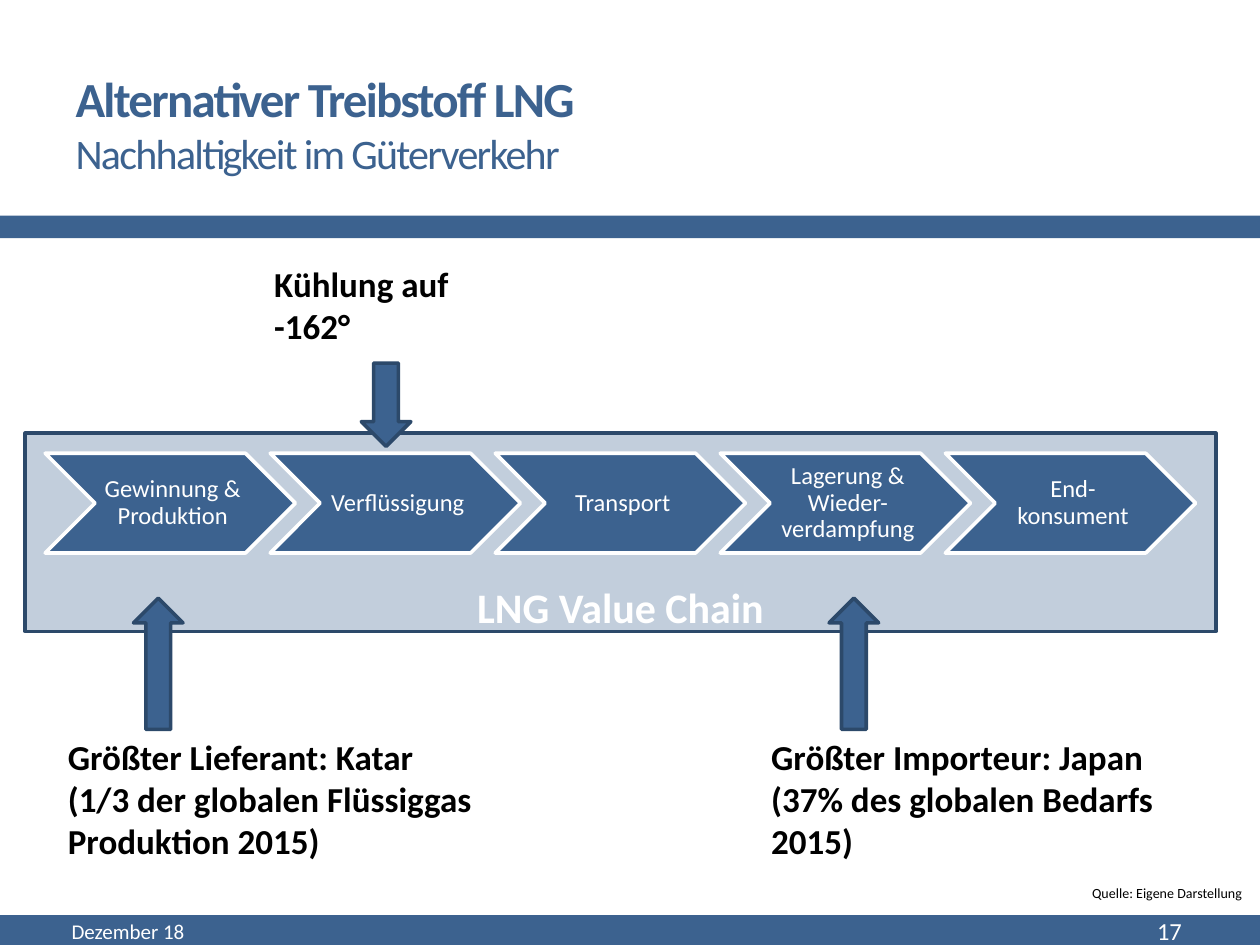
from dataclasses import dataclass

import pptx
import pptx.dml.color
import pptx.enum.shapes
import pptx.enum.text
import pptx.util

Pt = pptx.util.Pt
MSO = pptx.enum.shapes.MSO_SHAPE
ALIGN = pptx.enum.text.PP_ALIGN
ANCHOR = pptx.enum.text.MSO_ANCHOR

BLUE, DARK, WHITE, BLACK = "3C628F", "2C496A", "FFFFFF", "000000"
FONT = "Calibri"


@dataclass
class Box:
    x: float
    y: float
    w: float
    h: float

    def emu(self) -> list:
        return [Pt(v) for v in (self.x, self.y, self.w, self.h)]


@dataclass
class Label:
    box: Box
    lines: list[str]
    size: float
    color: str = BLACK
    bold: bool = False
    align: ALIGN = ALIGN.LEFT
    anchor: ANCHOR = ANCHOR.TOP


@dataclass
class Arrow:
    kind: MSO
    box: Box


def rgb(value: str) -> pptx.dml.color.RGBColor:
    return pptx.dml.color.RGBColor.from_string(value)


def add_run(p, text: str, size: float, color: str, bold: bool = False):
    r = p.add_run()
    r.text = text
    r.font.name = FONT
    r.font.size = Pt(size)
    r.font.bold = bold
    r.font.color.rgb = rgb(color)
    return r


def set_margins(tf, left: float, top: float, right: float, bottom: float) -> None:
    tf.margin_left, tf.margin_top = Pt(left), Pt(top)
    tf.margin_right, tf.margin_bottom = Pt(right), Pt(bottom)


def add_shape(s, kind: MSO, box: Box, fill: str = BLUE, line: str | None = None):
    sp = s.shapes.add_shape(kind, *box.emu())
    sp.shadow.inherit = False
    sp.fill.solid()
    sp.fill.fore_color.rgb = rgb(fill)
    if line:
        sp.line.color.rgb = rgb(line)
        sp.line.width = Pt(2.08)
    else:
        sp.line.fill.background()
    return sp


def set_alpha(sp, percent: int) -> None:
    color = sp.fill._xPr.find(".//" + pptx.oxml.ns.qn("a:srgbClr"))
    alpha = pptx.oxml.parse_xml(
        f'<a:alpha {pptx.oxml.ns.nsdecls("a")} val="{percent * 1000}"/>')
    color.append(alpha)


def add_label(s, label: Label) -> None:
    tf = s.shapes.add_textbox(*label.box.emu()).text_frame
    tf.word_wrap = True
    tf.vertical_anchor = label.anchor
    p = tf.paragraphs[0]
    p.alignment = label.align
    for i, line in enumerate(label.lines):
        if i:
            p.add_line_break()
        add_run(p, line, label.size, label.color, label.bold)


def add_title(s) -> None:
    sp = s.shapes.title
    sp.left, sp.top, sp.width, sp.height = Box(36, 31.7, 375, 77.8).emu()
    tf = sp.text_frame
    tf.word_wrap = True
    tf.vertical_anchor = ANCHOR.MIDDLE
    p = tf.paragraphs[0]
    p.alignment = ALIGN.LEFT
    heading = add_run(p, "Alternativer Treibstoff LNG", 28, BLUE, True)
    p.add_line_break()
    subtitle = add_run(p, "Nachhaltigkeit im Güterverkehr", 24, BLUE)
    for r in (heading, subtitle):
        r.font._element.set("spc", "-100")


def add_chain(s, steps: list[str]) -> None:
    band = add_shape(s, MSO.RECTANGLE, Box(14.4, 247.5, 680.4, 113.3), BLUE, DARK)
    set_alpha(band, 31)
    tf = band.text_frame
    set_margins(tf, 7.2, 0, 7.2, 0)
    tf.vertical_anchor = ANCHOR.BOTTOM
    p = tf.paragraphs[0]
    p.alignment = ALIGN.CENTER
    add_run(p, "LNG Value Chain", 24, WHITE, True)

    for i, step in enumerate(steps):
        box = Box(25.8 + i * 128.6, 259, 143, 57)
        tf = add_shape(s, MSO.CHEVRON, box, BLUE, WHITE).text_frame
        tf.word_wrap = True
        tf.vertical_anchor = ANCHOR.MIDDLE
        set_margins(tf, 4.4, 1.5, 1.5, 1.5)
        p = tf.paragraphs[0]
        p.alignment = ALIGN.CENTER
        p.line_spacing = 0.9
        add_run(p, step, 14, WHITE)


STEPS = ["Gewinnung & Produktion", "Verflüssigung", "Transport",
         "Lagerung & Wieder-verdampfung", "End-konsument"]
BARS = [Box(0, 522.9, 720, 17.1), Box(0, 123.3, 720, 12.8)]
ARROWS = [
    Arrow(MSO.UP_ARROW, Box(76.3, 341.8, 28.3, 75)),
    Arrow(MSO.UP_ARROW, Box(473.8, 341.8, 28.3, 75)),
    Arrow(MSO.DOWN_ARROW, Box(206.5, 207.5, 28.3, 47.6)),
]
LABELS = [
    Label(Box(149.6, 146.2, 142.6, 55.4), ["Kühlung auf", "-162°"], 20, bold=True),
    Label(Box(31.7, 416.9, 250, 80),
          ["Größter Lieferant: Katar", "(1/3 der globalen Flüssiggas Produktion 2015)"],
          20, bold=True),
    Label(Box(433.6, 416.9, 250, 80),
          ["Größter Importeur: Japan", "(37% des globalen Bedarfs 2015)"],
          20, bold=True),
    Label(Box(617, 501.8, 103, 17), ["Quelle: Eigene Darstellung"], 8),
    Label(Box(33.8, 519.1, 228, 26), ["Dezember 18"], 12, WHITE, anchor=ANCHOR.MIDDLE),
    Label(Box(598.3, 519.1, 84.2, 26), ["17"], 14, WHITE,
          align=ALIGN.RIGHT, anchor=ANCHOR.MIDDLE),
]


def main() -> None:
    prs = pptx.Presentation()
    prs.slide_width, prs.slide_height = Pt(720), Pt(540)
    s = prs.slides.add_slide(prs.slide_layouts[5])
    add_title(s)
    for bar in BARS:
        add_shape(s, MSO.RECTANGLE, bar)
    add_chain(s, STEPS)
    for arrow in ARROWS:
        add_shape(s, arrow.kind, arrow.box, BLUE, DARK)
    for label in LABELS:
        add_label(s, label)
    prs.save("out.pptx")


if __name__ == "__main__":
    main()
